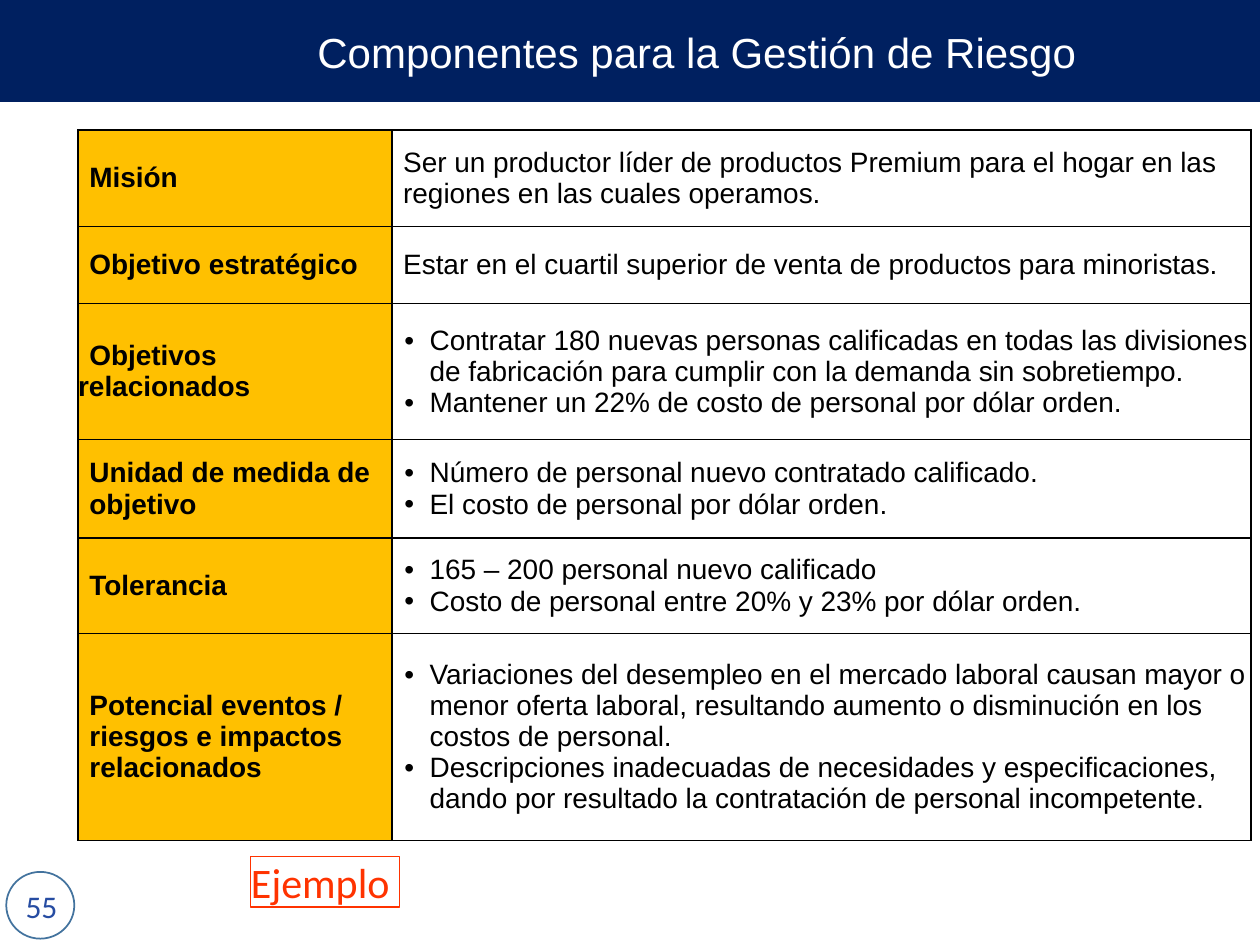
from pptx import Presentation
from pptx.dml.color import RGBColor
from pptx.enum.shapes import MSO_SHAPE as Shape
from pptx.enum.text import MSO_ANCHOR as Anchor, PP_ALIGN as Align
from pptx.oxml import parse_xml
from pptx.oxml.ns import nsdecls
from pptx.util import Inches, Pt

TITLE = "Componentes para la Gestión de Riesgo"
TAG = "Ejemplo"
PAGE_NUMBER = "55"

# Paragraph indents: left margin, first line
FIRST_LINE, BLOCK, BULLET = (0, 0.09), (0.09, 0), (0.3, -0.2)

# Row height, label, label indent, paragraphs, paragraph indent
ROWS = [
    (0.77, "Misión", FIRST_LINE,
     ["Ser un productor líder de productos Premium para el hogar en las regiones "
      "en las cuales operamos."], BLOCK),
    (0.61, "Objetivo estratégico", FIRST_LINE,
     ["Estar en el cuartil superior de venta de productos para minoristas."], BLOCK),
    (1.08, "Objetivos relacionados", FIRST_LINE,
     ["Contratar 180 nuevas personas calificadas en todas las divisiones de "
      "fabricación para cumplir con la demanda sin sobretiempo.",
      "Mantener un 22% de costo de personal por dólar orden."], BULLET),
    (0.78, "Unidad de medida de objetivo", BLOCK,
     ["Número de personal nuevo contratado calificado.",
      "El costo de personal por dólar orden."], BULLET),
    (0.76, "Tolerancia", FIRST_LINE,
     ["165 – 200 personal nuevo calificado",
      "Costo de personal entre 20% y 23% por dólar orden."], BULLET),
    (1.64, "Potencial eventos / riesgos e impactos relacionados", BLOCK,
     ["Variaciones del desempleo en el mercado laboral causan mayor o menor oferta "
      "laboral, resultando aumento o disminución en los costos de personal.",
      "Descripciones inadecuadas de necesidades y especificaciones, dando por "
      "resultado la contratación de personal incompetente."], BULLET),
]
COLUMNS = [2.49, 6.82]


def color(value):
    return RGBColor.from_string(value)


def style(paragraph, size, font, value, bold=False):
    for span in paragraph.runs:
        span.font.size, span.font.name, span.font.bold = Pt(size), font, bold
        span.font.color.rgb = color(value)


def set_indent(paragraph, indent):
    properties = paragraph._p.get_or_add_pPr()
    left, first = indent
    properties.set("marL", str(Inches(left)))
    properties.set("indent", str(Inches(first)))
    if indent == BULLET:
        properties.append(parse_xml(f'<a:buFont {nsdecls("a")} typeface="Arial"/>'))
        properties.append(parse_xml(f'<a:buChar {nsdecls("a")} char="•"/>'))


def clear_margins(target):
    target.margin_left = target.margin_right = 0
    target.margin_top = target.margin_bottom = 0


def add_shape(kind, place, fill=None, line=None, width=1):
    shape = page.shapes.add_shape(kind, *map(Inches, place))
    shape.shadow.inherit = False
    for part, value in ((shape.fill, fill), (shape.line.fill, line)):
        if value:
            part.solid()
            part.fore_color.rgb = color(value)
        else:
            part.background()
    if line:
        shape.line.width = Pt(width)
    return shape


def add_text(text, place, size, font, value):
    box = page.shapes.add_textbox(*map(Inches, place))
    box.text_frame.word_wrap = True
    box.text_frame.text = text
    paragraph = box.text_frame.paragraphs[0]
    paragraph.alignment = Align.CENTER
    style(paragraph, size, font, value)


def fill_cell(cell, texts, indent, bold=False, fill=None):
    clear_margins(cell)
    cell.vertical_anchor = Anchor.MIDDLE
    cell.text_frame.text = "\n".join(texts)
    for paragraph in cell.text_frame.paragraphs:
        set_indent(paragraph, indent)
        style(paragraph, 16, "Arial", "000000", bold)
    if fill:
        cell.fill.solid()
        cell.fill.fore_color.rgb = color(fill)
    else:
        cell.fill.background()
    # Borders come before the fill
    for index, side in enumerate("LRTB"):
        cell._tc.get_or_add_tcPr().insert(index, parse_xml(
            f'<a:ln{side} {nsdecls("a")} w="{Pt(1)}"><a:solidFill>'
            f'<a:srgbClr val="000000"/></a:solidFill></a:ln{side}>'))


deck = Presentation()
deck.slide_width, deck.slide_height = Inches(10), Inches(7.5)
page = deck.slides.add_slide(deck.slide_layouts[6])

# Header band and page number circle
add_shape(Shape.RECTANGLE, (0, 0, 10, 0.81), fill="002060")
add_shape(Shape.OVAL, (0.05, 6.92, 0.54, 0.53), fill="FFFFFF", line="43739E")

# Components table
heights = [row[0] for row in ROWS]
frame = page.shapes.add_table(len(ROWS), len(COLUMNS), Inches(0.62), Inches(1.03),
                              Inches(sum(COLUMNS)), Inches(sum(heights)))
table = frame.table
table.first_row = table.horz_banding = False
for column, width in zip(table.columns, COLUMNS):
    column.width = Inches(width)
for row, (height, label, label_indent, texts, indent) in zip(table.rows, ROWS):
    row.height = Inches(height)
    fill_cell(row.cells[0], [label], label_indent, bold=True, fill="FFC000")
    fill_cell(row.cells[1], texts, indent)

# Example tag
tag = add_shape(Shape.RECTANGLE, (1.99, 6.8, 1.18, 0.4), line="FF3300", width=0.75)
clear_margins(tag.text_frame)
tag.text_frame.vertical_anchor = Anchor.TOP
tag.text_frame.text = TAG
tag_line = tag.text_frame.paragraphs[0]
tag_line.alignment = Align.LEFT
set_indent(tag_line, (0.2, -0.2))
style(tag_line, 24, "Calibri", "FF3300")

# Page number and title
add_text(PAGE_NUMBER, (0.1, 6.99, 0.46, 0.4), 18, "Calibri", "264CA2")
add_text(TITLE, (0.68, 0.16, 9.7, 0.5), 24, "Arial", "FFFFFF")

deck.save("out.pptx")
